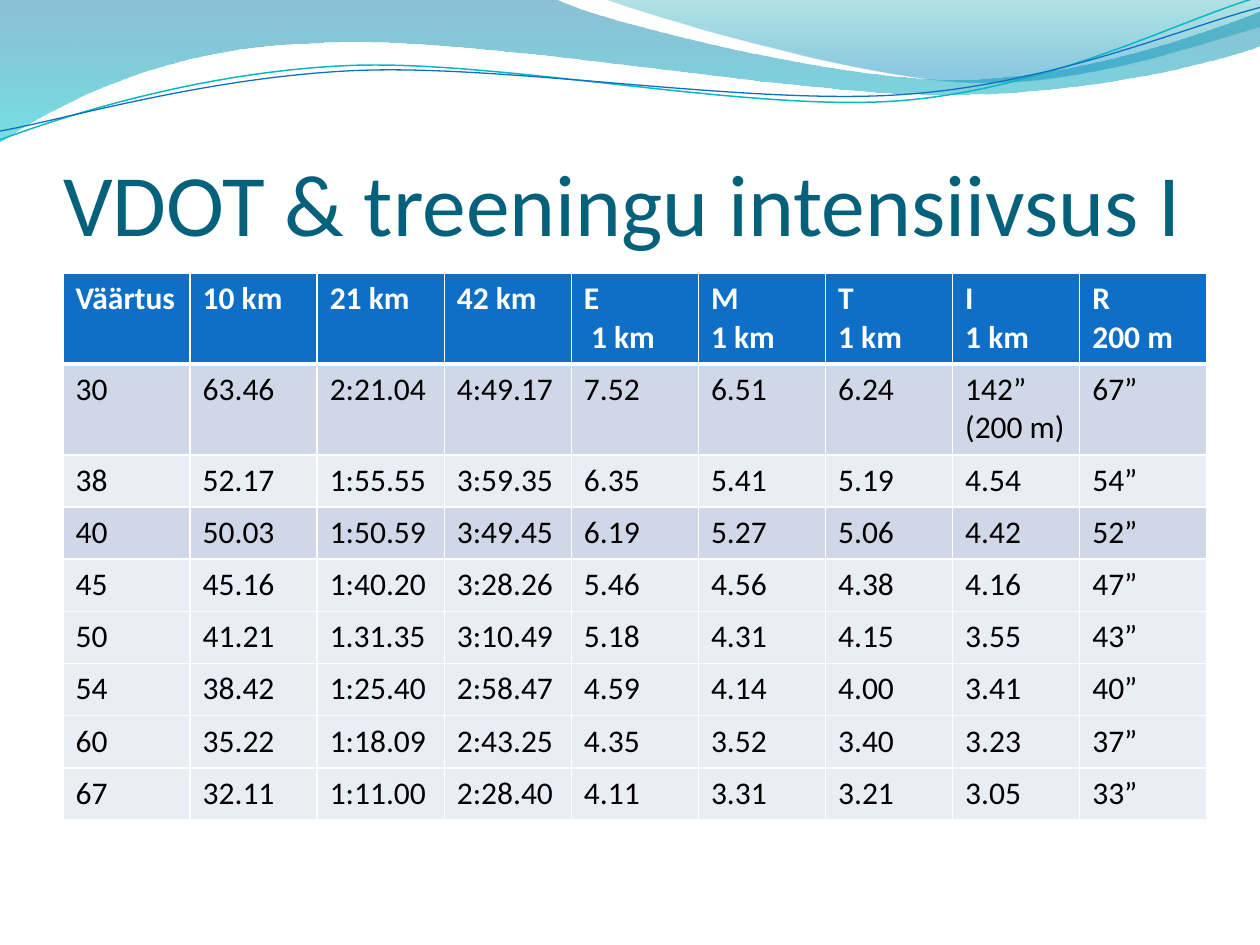
"""Build a slide with a wave banner and a table of running times by VDOT value."""
import math
from dataclasses import dataclass

from lxml import etree
from pptx import Presentation, util as u
from pptx.dml import color
from pptx.enum import text
from pptx.oxml import ns


@dataclass(frozen=True)
class Theme:
    font: str = "Calibri"
    title_size: int = 50
    table_size: int = 18
    title: str = "04617B"
    header: str = "0F6FC6"
    header_text: str = "FFFFFF"
    body_text: str = "000000"
    dark_band: str = "D0D8E8"
    light_band: str = "E9EDF4"
    border: str = "FFFFFF"
    back_wave: tuple = ((0, "0074A1", 45), (1, "00C6CF", 55))
    front_wave: tuple = ((0, "00A1A9", 30), (0.8, "008BBF", 45))
    teal_line: str = "0AB8BF"
    blue_line: str = "0F6FC6"


theme = Theme()
rgb = color.RGBColor.from_string


def trace(page, segments, closed):
    """Draw a freeform from two-number line ends and six-number curves."""
    points = [
        (u.Inches(x), u.Inches(y))
        for segment in segments
        for x, y in zip(segment[::2], segment[1::2])
    ]
    builder = page.shapes.build_freeform(*points[0])
    builder.add_line_segments(points[1:], close=closed)
    shape = builder.convert_to_shape()
    shape.shadow.inherit = False
    steps = iter(list(shape.element.iter(ns.qn("a:lnTo"))))
    for segment in segments[1:]:
        first = next(steps)
        if len(segment) == 6:
            first.tag = ns.qn("a:cubicBezTo")
            for _ in range(2):
                extra = next(steps)
                first.append(extra[0])
                extra.getparent().remove(extra)
    return shape


def write(para, words, size, ink, bold=False):
    """Add one formatted run to a paragraph."""
    span = para.add_run()
    span.text = words
    span.font.name = theme.font
    span.font.size = u.Pt(size)
    span.font.bold = bold
    span.font.color.rgb = rgb(ink)


deck = Presentation()
deck.slide_width, deck.slide_height = u.Inches(10), u.Inches(7.5)
page = deck.slides.add_slide(deck.slide_layouts[5])

waves = [
    (theme.back_wave, [
        (0, 0), (4.4, -0.01), (4.76, 0.17, 6.64, 0.63, 7.58, 0.63),
        (8.53, 0.63, 9.58, 0.26, 10, 0.09), (10.01, 0.36),
        (9.83, 0.44, 8.7, 0.76, 7.46, 0.75), (6.22, 0.75, 3.82, 0.28, 2.57, 0.34),
        (1.29, 0.36, 0.46, 0.83, -0.01, 1.13), (0, 0),
    ]),
    (theme.front_wave, [
        (4.79, -0.01), (5.09, 0.11, 6.82, 0.62, 7.69, 0.65),
        (8.56, 0.69, 9.61, 0.32, 10, 0.21), (10, 0), (4.79, -0.01),
    ]),
]
for stops, outline in waves:
    wave = trace(page, outline, True)
    wave.line.fill.background()
    wave.fill.gradient()
    wave.fill.gradient_angle = 270
    for stop, (position, tint, _) in zip(wave.fill.gradient_stops, stops):
        stop.position = position
        stop.color.rgb = rgb(tint)
    for node, (_, _, opacity) in zip(wave.element.iter(ns.qn("a:srgbClr")), stops):
        etree.SubElement(node, ns.qn("a:alpha"), val=str(opacity * 1000))

strands = [
    (theme.teal_line, 0.85, (4.99, 0.58), [
        (0, 1.11), (0.48, 0.93, 1.58, 0.57, 2.77, 0.52),
        (3.95, 0.47, 5.93, 0.89, 7.13, 0.8), (8.33, 0.71, 9.38, 0.15, 9.98, -0.02),
    ]),
    (theme.blue_line, 0.75, (5, 0.59), [
        (0, 1.04), (0.47, 0.96, 1.64, 0.61, 2.83, 0.56),
        (4.03, 0.51, 5.97, 0.84, 7.17, 0.75), (8.36, 0.67, 9.41, 0.21, 10, 0.06),
    ]),
]
tilt = 2.7
cosine, sine = math.cos(math.radians(tilt)), math.sin(math.radians(tilt))
for ink, width, (middle_x, middle_y), curve in strands:
    level = []
    for segment in curve:
        offsets = [(x - middle_x, y - middle_y) for x, y in zip(segment[::2], segment[1::2])]
        level.append([
            value for x, y in offsets
            for value in (middle_x + x * cosine - y * sine, middle_y + x * sine + y * cosine)
        ])
    strand = trace(page, level, False)
    strand.rotation = 360 - tilt
    strand.fill.background()
    strand.line.color.rgb = rgb(ink)
    strand.line.width = u.Pt(width)

title = page.shapes.title
title.element.getparent().append(title.element)
title.left, title.top = u.Inches(0.5), u.Inches(0.77)
title.width, title.height = u.Inches(9), u.Inches(1.25)
box = title.text_frame
box.auto_size = text.MSO_AUTO_SIZE.NONE
box.word_wrap = True
box.vertical_anchor = text.MSO_ANCHOR.BOTTOM
box.margin_left = box.margin_right = box.margin_bottom = 0
box.margin_top = u.Inches(0.05)
box.paragraphs[0].alignment = text.PP_ALIGN.LEFT
write(box.paragraphs[0], "VDOT & treeningu intensiivsus I", theme.title_size, theme.title)

records = [
    ["Väärtus", "10 km", "21 km", "42 km", "E\n 1 km", "M\n1 km", "T\n1 km", "I\n1 km", "R\n200 m"],
    ["30", "63.46", "2:21.04", "4:49.17", "7.52", "6.51", "6.24", "142”\n(200 m)", "67”"],
    ["38", "52.17", "1:55.55", "3:59.35", "6.35", "5.41", "5.19", "4.54", "54”"],
    ["40", "50.03", "1:50.59", "3:49.45", "6.19", "5.27", "5.06", "4.42", "52”"],
    ["45", "45.16", "1:40.20", "3:28.26", "5.46", "4.56", "4.38", "4.16", "47”"],
    ["50", "41.21", "1.31.35", "3:10.49", "5.18", "4.31", "4.15", "3.55", "43”"],
    ["54", "38.42", "1:25.40", "2:58.47", "4.59", "4.14", "4.00", "3.41", "40”"],
    ["60", "35.22", "1:18.09", "2:43.25", "4.35", "3.52", "3.40", "3.23", "37”"],
    ["67", "32.11", "1:11.00", "2:28.40", "4.11", "3.31", "3.21", "3.05", "33”"],
]
width, height, tall_row = 9.08, 4.34, 0.72
table = page.shapes.add_table(
    len(records), len(records[0]),
    u.Inches(0.5), u.Inches(2.17), u.Inches(width), u.Inches(height),
).table
for column in table.columns:
    column.width = u.Inches(width / len(records[0]))
short_row = (height - 2 * tall_row) / (len(records) - 2)

for row, record in enumerate(records):
    table.rows[row].height = u.Inches(tall_row if row < 2 else short_row)
    is_header = row == 0
    if is_header:
        band = theme.header
    else:
        band = theme.dark_band if row in (1, 3) else theme.light_band
    ink = theme.header_text if is_header else theme.body_text
    borders = {"L": 1, "R": 1, "T": 3 if row == 1 else 1, "B": 3 if is_header else 1}
    for column, entry in enumerate(record):
        cell = table.cell(row, column)
        properties = cell._tc.get_or_add_tcPr()
        for side, weight in borders.items():
            edge = etree.SubElement(properties, ns.qn(f"a:ln{side}"), w=str(u.Pt(weight)))
            paint = etree.SubElement(edge, ns.qn("a:solidFill"))
            etree.SubElement(paint, ns.qn("a:srgbClr"), val=theme.border)
        cell.fill.solid()
        cell.fill.fore_color.rgb = rgb(band)
        for number, line in enumerate(entry.split("\n")):
            frame = cell.text_frame
            para = frame.add_paragraph() if number else frame.paragraphs[0]
            write(para, line, theme.table_size, ink, is_header)

deck.save("out.pptx")
